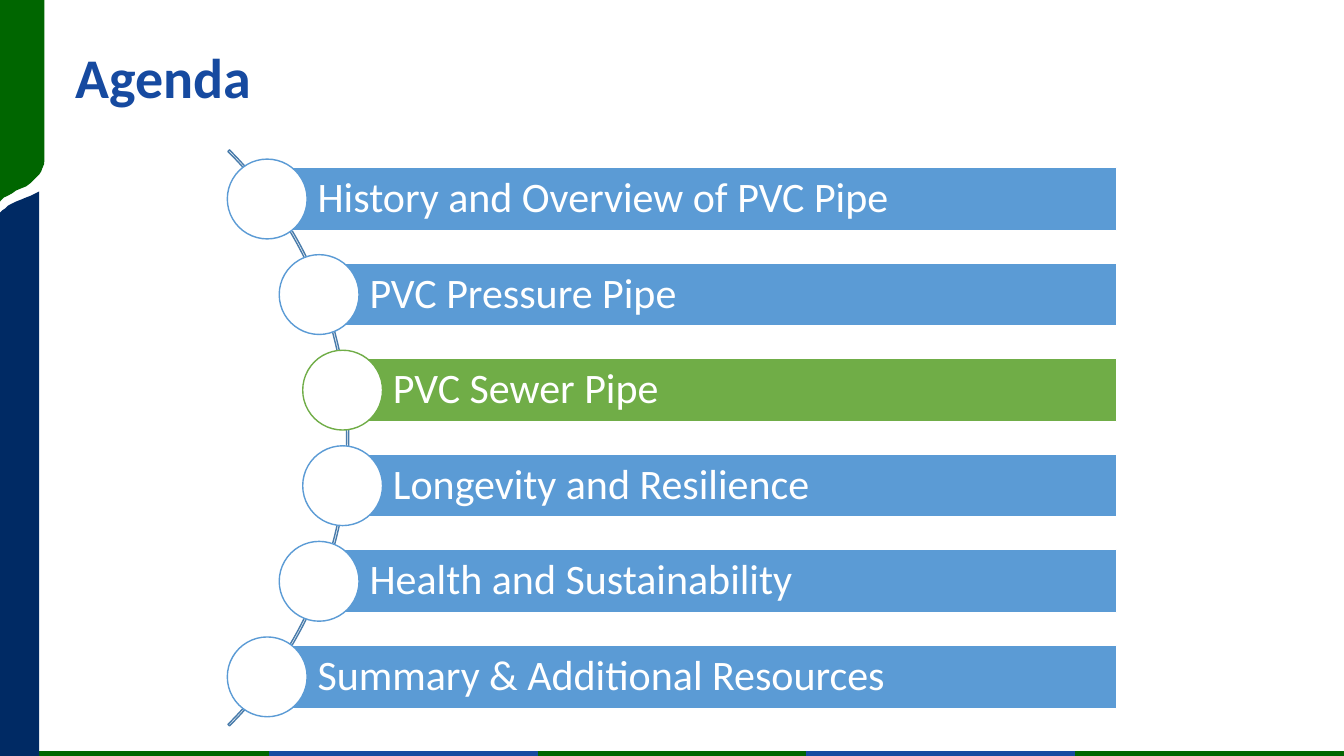
import math
from dataclasses import dataclass

import lxml.etree
import pptx
import pptx.dml.color
import pptx.enum.shapes
import pptx.enum.text
import pptx.oxml.ns
import pptx.util

Pt = pptx.util.Pt
Shapes = pptx.enum.shapes.MSO_SHAPE

GREEN, BLUE, NAVY, WHITE = "006600", "164AA0", "002A64", "FFFFFF"
BAR_BLUE, BAR_GREEN, ARC_BLUE = "5B9BD5", "70AD47", "497CAB"
SLIDE_WIDTH, SLIDE_HEIGHT = 960, 540

ARC_X, ARC_Y, ARC_RADIUS = -41.76, 312.8, 290.9
BAR_ORBIT = 288.5
BAR_PITCH, BAR_HEIGHT, BAR_RIGHT = 68.26, 45, 797.7
CIRCLE_SIZE = 57


@dataclass(frozen=True)
class AgendaItem:
    text: str
    color: str = BAR_BLUE


@dataclass(frozen=True)
class SidePanel:
    color: str
    points: tuple[tuple[float, float], ...]


AGENDA = (
    AgendaItem("History and Overview of PVC Pipe"),
    AgendaItem("PVC Pressure Pipe"),
    AgendaItem("PVC Sewer Pipe", BAR_GREEN),
    AgendaItem("Longevity and Resilience"),
    AgendaItem("Health and Sustainability"),
    AgendaItem("Summary & Additional Resources"),
)

SIDE_PANELS = (
    SidePanel(GREEN, (
        (0, 0), (31.7, 0), (31.7, 115.2), (31.5, 117.4), (30.3, 120.2),
        (29.5, 122.4), (28.1, 124.6), (25.9, 126.7), (23.8, 128.9),
        (21.6, 131), (18.7, 133.2), (15.1, 134.6), (11.5, 136.1),
        (8.6, 138.2), (5.8, 139.7), (2.9, 141.1), (0.7, 143.3), (0, 144))),
    SidePanel(NAVY, (
        (0, SLIDE_HEIGHT), (28, SLIDE_HEIGHT), (28, 136.8), (25.2, 138.2),
        (22.3, 139.7), (18.7, 141.1), (15.1, 142.6), (11.5, 144),
        (8.6, 145.4), (5.8, 146.9), (3.6, 149), (1.4, 150.5), (0, 151.9))),
)


def set_color(color_format, color: str) -> None:
    color_format.rgb = pptx.dml.color.RGBColor.from_string(color)


def style_shape(shape, fill: str | None = None, line: str | None = None) -> None:
    shape.shadow.inherit = False
    if fill:
        shape.fill.solid()
        set_color(shape.fill.fore_color, fill)
    else:
        shape.fill.background()
    if line:
        set_color(shape.line.color, line)
        shape.line.width = Pt(1)
    else:
        shape.line.fill.background()


def add_shape(slide, kind, left: float, top: float, width: float, height: float,
              fill: str | None = None, line: str | None = None):
    shape = slide.shapes.add_shape(kind, Pt(left), Pt(top), Pt(width), Pt(height))
    style_shape(shape, fill, line)
    return shape


def write_text(shape, text: str, *, size: float, color: str, bold: bool = False,
               insets: tuple[float, float, float, float] = (7.2, 3.6, 7.2, 3.6)) -> None:
    frame = shape.text_frame
    frame.word_wrap = True
    frame.auto_size = pptx.enum.text.MSO_AUTO_SIZE.NONE
    frame.vertical_anchor = pptx.enum.text.MSO_ANCHOR.MIDDLE
    (frame.margin_left, frame.margin_top,
     frame.margin_right, frame.margin_bottom) = map(Pt, insets)
    paragraph = frame.paragraphs[0]
    paragraph.alignment = pptx.enum.text.PP_ALIGN.LEFT
    paragraph.line_spacing = 0.9
    run = paragraph.add_run()
    run.text = text
    run.font.name = "Calibri"
    run.font.size = Pt(size)
    run.font.bold = bold
    set_color(run.font.color, color)


def draw_footer_stripe(slide) -> None:
    segment = SLIDE_WIDTH / 5
    for index in range(5):
        line = slide.shapes.add_connector(
            pptx.enum.shapes.MSO_CONNECTOR.STRAIGHT,
            Pt(index * segment), Pt(538), Pt((index + 1) * segment), Pt(538))
        line.line.width = Pt(3.75)
        set_color(line.line.color, BLUE if index % 2 else GREEN)
        lxml.etree.SubElement(line.element.spPr, pptx.oxml.ns.qn("a:effectLst"))


def draw_side_panel(slide, panel: SidePanel) -> None:
    start, *others = [(Pt(x), Pt(y)) for x, y in panel.points]
    builder = slide.shapes.build_freeform(*start)
    builder.add_line_segments(others, close=True)
    style_shape(builder.convert_to_shape(), panel.color)


def draw_agenda(slide) -> None:
    # Thin arc behind the circles, from 315 to 45 degrees
    arc = add_shape(slide, Shapes.BLOCK_ARC, ARC_X - ARC_RADIUS, ARC_Y - ARC_RADIUS,
                    2 * ARC_RADIUS, 2 * ARC_RADIUS, line=ARC_BLUE)
    for index, value in enumerate((189, 27, 0.00267)):
        arc.adjustments[index] = value

    # Bars start on the arc, each with a circle centred on its left end
    for index, item in enumerate(AGENDA):
        offset = (index - (len(AGENDA) - 1) / 2) * BAR_PITCH
        left = ARC_X + math.sqrt(BAR_ORBIT ** 2 - offset ** 2)
        middle = ARC_Y + offset
        bar = add_shape(slide, Shapes.RECTANGLE, left, middle - BAR_HEIGHT / 2,
                        BAR_RIGHT - left, BAR_HEIGHT, item.color, WHITE)
        write_text(bar, item.text, size=30, color=WHITE, insets=(36, 6, 6, 6))
        add_shape(slide, Shapes.OVAL, left - CIRCLE_SIZE / 2, middle - CIRCLE_SIZE / 2,
                  CIRCLE_SIZE, CIRCLE_SIZE, WHITE, item.color)


def main() -> None:
    presentation = pptx.Presentation()
    presentation.slide_width = Pt(SLIDE_WIDTH)
    presentation.slide_height = Pt(SLIDE_HEIGHT)
    slide = presentation.slides.add_slide(presentation.slide_layouts[5])

    # Frame of the slide
    draw_footer_stripe(slide)
    for panel in SIDE_PANELS:
        draw_side_panel(slide, panel)

    # Title and agenda
    title = slide.shapes.title
    title.left, title.top, title.width, title.height = map(Pt, (46.8, 10, 832, 94.3))
    write_text(title, "Agenda", size=40, color=BLUE, bold=True)
    draw_agenda(slide)

    presentation.save("out.pptx")


if __name__ == "__main__":
    main()
